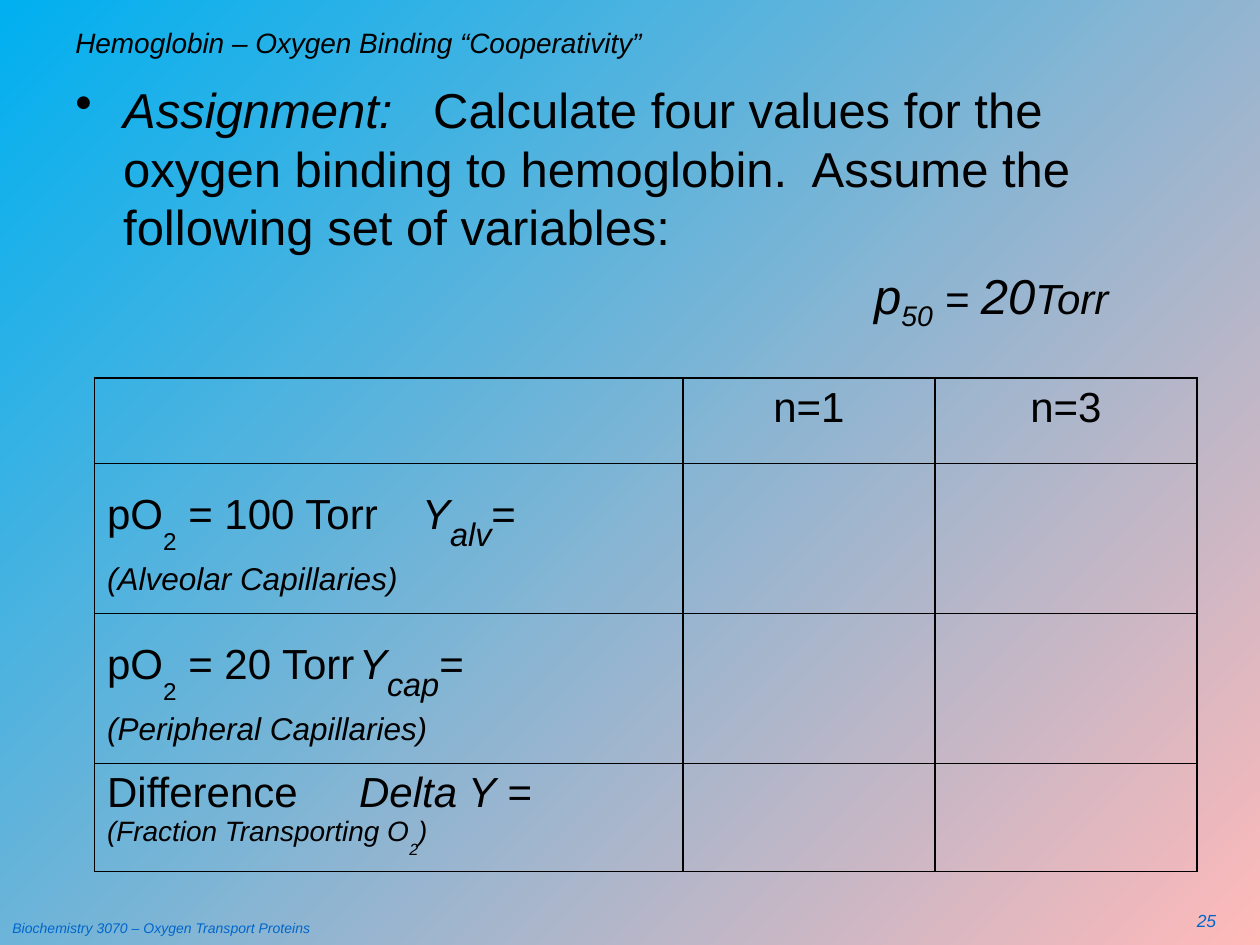
from lxml import etree
from pptx import Presentation
from pptx.dml.color import RGBColor
from pptx.enum import text
from pptx.oxml.ns import qn
from pptx.util import Inches, Pt

FONT = "Arial"
BLACK, BLUE = "000000", "0066CC"


def color(value):
    return RGBColor.from_string(value)


def add_runs(paragraph, runs, size=24, ink=BLACK, italic=False, align=None,
             before=0, left=0, hanging=0, bullet=None, tab=None):
    """Write runs given as strings or (string, overrides) pairs."""
    properties = paragraph._p.get_or_add_pPr()
    properties.set("marL", str(Inches(left)))
    properties.set("indent", str(-Inches(hanging)))
    paragraph.space_before = Pt(before)
    if bullet:
        etree.SubElement(properties, qn("a:buChar")).set("char", bullet)
    else:
        etree.SubElement(properties, qn("a:buNone"))
    if tab:
        stops = etree.SubElement(properties, qn("a:tabLst"))
        etree.SubElement(stops, qn("a:tab"), pos=str(Inches(tab)), algn="l")
    if align:
        paragraph.alignment = align
    for item in runs:
        wording, style = (item, {}) if isinstance(item, str) else item
        run = paragraph.add_run()
        run.text = wording
        run.font.name = FONT
        run.font.size = Pt(style.get("size", size))
        run.font.italic = style.get("italic", italic)
        run.font.color.rgb = color(ink)
        if "baseline" in style:
            run.font._element.set("baseline", str(style["baseline"] * 1000))


def add_text_box(slide, box, paragraphs, anchor=text.MSO_ANCHOR.TOP):
    frame = slide.shapes.add_textbox(*map(Inches, box)).text_frame
    frame.word_wrap = True
    frame.vertical_anchor = anchor
    fill_frame(frame, paragraphs)


def fill_frame(frame, paragraphs):
    for index, (runs, style) in enumerate(paragraphs):
        paragraph = frame.add_paragraph() if index else frame.paragraphs[0]
        add_runs(paragraph, runs, **style)


def add_background(slide):
    fill = slide.background.fill
    fill.gradient()
    fill.gradient_angle = 315
    for stop, position, value in zip(fill.gradient_stops, (0, 1), ("00B0F0", "FFB9B9")):
        stop.position = position
        stop.color.rgb = color(value)


def add_assignment(slide, box):
    add_text_box(slide, box, [
        ([("Assignment:", {"italic": True}),
          "\tCalculate four values for the oxygen binding to hemoglobin.  "
          "Assume the following set of variables:"],
         dict(size=28, left=0.38, hanging=0.38, bullet="•", tab=2.84)),
        (["p", ("50", {"baseline": -25}), (" = ", {"size": 24}), "20",
          ("Torr", {"size": 24})],
         dict(size=28, italic=True, before=5.6, left=6.34)),
    ])


def add_borders(cell):
    properties = cell._tc.get_or_add_tcPr()
    for position, side in enumerate(("lnL", "lnR", "lnT", "lnB")):
        line = etree.Element(qn("a:" + side), w=str(Pt(1)))
        fill = etree.SubElement(line, qn("a:solidFill"))
        etree.SubElement(fill, qn("a:srgbClr"), val=BLACK)
        properties.insert(position, line)


def pressure_label(pressure, subscript, place):
    return [
        (["pO", ("2", {"baseline": -50}), f" = {pressure} Torr\t",
          ("Y", {"italic": True}),
          (subscript, {"italic": True, "size": 32, "baseline": -30}), "="],
         dict(tab=3.45)),
        ([f"({place})"], dict(size=18, italic=True, before=3.6)),
    ]


def add_values_table(slide, box):
    widths, heights = (4.67, 2, 2.08), (0.68, 1.19, 1.19, 0.77)
    table = slide.shapes.add_table(len(heights), len(widths), *map(Inches, box)).table
    table.first_row = table.horz_banding = False
    for column, width in zip(table.columns, widths):
        column.width = Inches(width)
    for row, height in zip(table.rows, heights):
        row.height = Inches(height)
    for cell in table.iter_cells():
        cell.fill.background()
        add_borders(cell)

    # Column headings
    for column, heading in enumerate(("n=1", "n=3"), 1):
        fill_frame(table.cell(0, column).text_frame,
                   [([heading], dict(align=text.PP_ALIGN.CENTER))])

    # Row labels
    labels = [
        pressure_label(100, "alv", "Alveolar Capillaries"),
        pressure_label(20, "cap", "Peripheral Capillaries"),
        [(["Difference\t", ("Delta Y", {"italic": True}), " ="], dict(tab=3.09)),
         (["(Fraction Transporting O", ("2", {"baseline": -50}), ")"],
          dict(size=16, italic=True))],
    ]
    for row, label in enumerate(labels, 1):
        fill_frame(table.cell(row, 0).text_frame, label)
    for row in (1, 2):
        table.cell(row, 0).margin_top = Inches(0.12)


def add_footer(slide):
    add_text_box(slide, (0, 7.25, 3.17, 0.25), [
        (["Biochemistry 3070 – Oxygen Transport Proteins"],
         dict(size=8, ink=BLUE, italic=True))])
    add_text_box(slide, (9.17, 7.17, 0.58, 0.33), [
        (["25"], dict(size=10, ink=BLUE, italic=True, align=text.PP_ALIGN.RIGHT))])


def main():
    presentation = Presentation()
    presentation.slide_width, presentation.slide_height = Inches(10), Inches(7.5)
    slide = presentation.slides.add_slide(presentation.slide_layouts[6])
    add_background(slide)
    add_footer(slide)
    add_text_box(slide, (0.5, 0.17, 9, 0.33), [
        (["Hemoglobin – Oxygen Binding “Cooperativity”"], dict(size=16, italic=True))],
        anchor=text.MSO_ANCHOR.MIDDLE)
    add_assignment(slide, (0.5, 0.58, 9, 6.33))
    add_values_table(slide, (0.75, 3, 8.75, 3.83))
    presentation.save("out.pptx")


if __name__ == "__main__":
    main()
